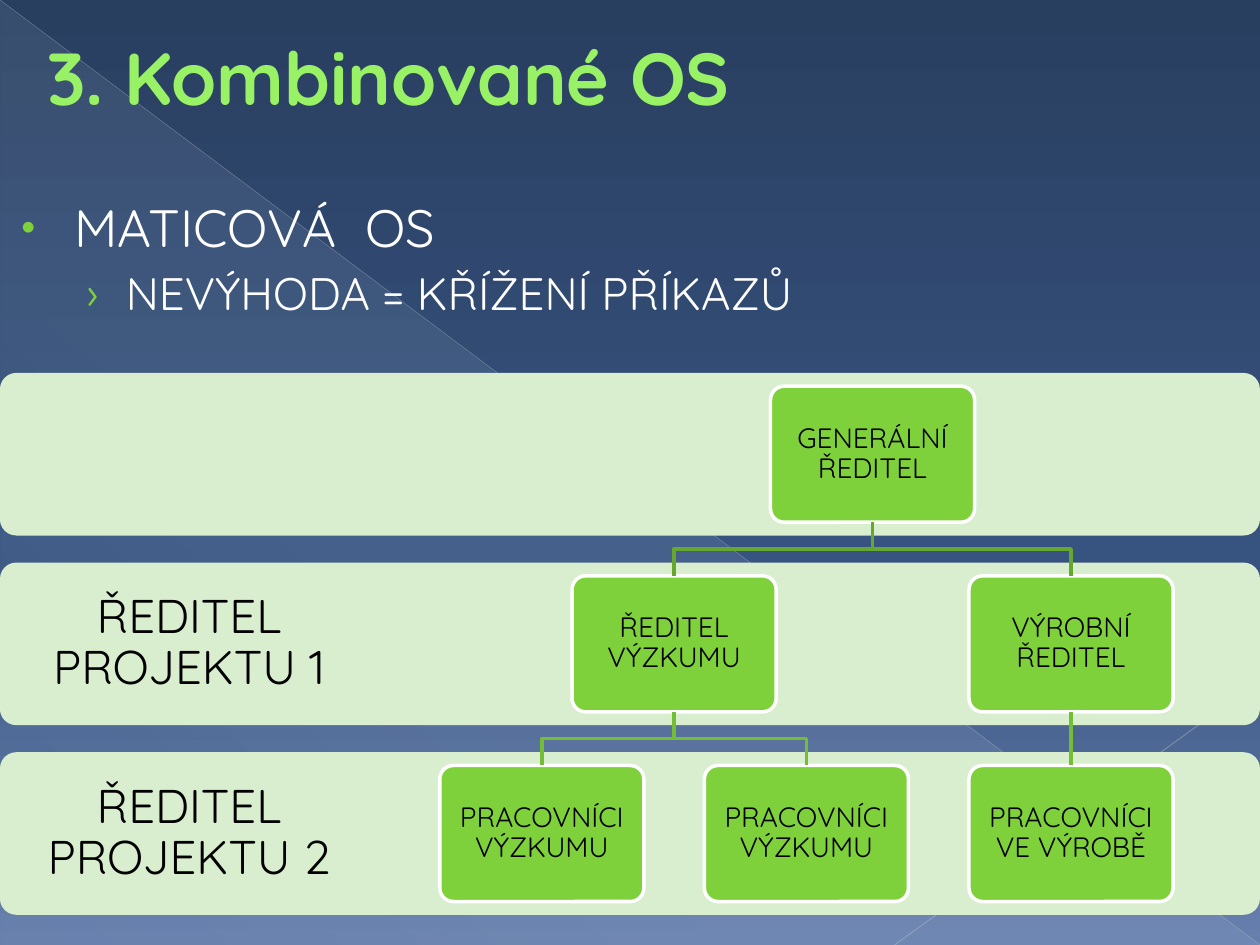
from lxml.etree import SubElement as Sub
from pptx import Presentation
from pptx.dml.color import RGBColor as Rgb
from pptx.enum.shapes import MSO_CONNECTOR as Link, MSO_SHAPE as Form
from pptx.enum.text import MSO_ANCHOR as Anchor, PP_ALIGN as Align
from pptx.oxml.ns import qn
from pptx.util import Inches as In, Pt

THEME = {
    "font": "Quicksand",
    "title": "99F166", "edge": "589129", "text": "FFFFFF", "ink": "000000",
    "lane": "D8EECE", "box": "7FD13B", "rim": "FFFFFF",
    "links": ["66A72F", "73BE36"],
    "sky": [(0, "293F60", 100), (60, "375380", 100), (100, "667FAC", 100)],
    "haze": [(0, "D6ECFF", 10), (70, "D6ECFF", 8), (100, "D6ECFF", 1)],
    "big": 42, "main": 30, "sub": 26, "label": 27, "small": 16,
}


def blend(props, stops, angle):
    """Swap the solid fill in props for a linear gradient of (place, colour, alpha)."""
    old = props.find(qn("a:solidFill"))
    grad = old.makeelement(qn("a:gradFill"), {"rotWithShape": "1"})
    props.replace(old, grad)
    row = Sub(grad, qn("a:gsLst"))
    for place, color, alpha in stops:
        stop = Sub(row, qn("a:gs"), pos=str(place * 1000))
        tint = Sub(stop, qn("a:srgbClr"), val=color)
        Sub(tint, qn("a:alpha"), val=str(alpha * 1000))
    Sub(grad, qn("a:lin"), ang=str(angle * 60000), scaled="0")


def write(para, text, size, color):
    run = para.add_run()
    run.text = text
    run.font.name = THEME["font"]
    run.font.size = Pt(THEME[size])
    run.font.color.rgb = Rgb.from_string(THEME[color])
    return run


deck = Presentation()
deck.slide_width, deck.slide_height = W, H = In(10), In(7.5)
slide = deck.slides.add_slide(deck.slide_layouts[6])
shapes = slide.shapes

# Backdrop
slide.background.fill.solid()
blend(slide.element.find(".//" + qn("p:bgPr")), THEME["sky"], 90)
haze = shapes.add_shape(Form.RIGHT_TRIANGLE, 0, 0, W, H)
haze.shadow.inherit = False
haze.line.fill.background()
haze.fill.solid()
blend(haze.element.spPr, THEME["haze"], 133)

rays = [
    (0, 0, W, H, "B7BCC5", 0.39, 35),
    (W, int(H * 0.72), int(W * 0.71), H, "BFC3CB", 0.47, 45),
]
for x1, y1, x2, y2, color, width, alpha in rays:
    ray = shapes.add_connector(Link.STRAIGHT, x1, y1, x2, y2)
    ray.line.color.rgb = Rgb.from_string(color)
    ray.line.width = Pt(width)
    tint = ray.element.spPr.find(".//" + qn("a:srgbClr"))
    Sub(tint, qn("a:alpha"), val=str(alpha * 1000))
    Sub(ray.element.spPr, qn("a:effectLst"))

# Bullets
body = shapes.add_textbox(0, In(1.5), In(9.25), In(1.3)).text_frame
body.word_wrap = True
points = [
    ("MATICOVÁ  OS", "main", 0.49, -0.42, 0, "•", 80),
    ("NEVÝHODA = KŘÍŽENÍ PŘÍKAZŮ", "sub", 0.9, -0.31, 4, "›", 95),
]
for i, (text, size, left, hang, gap, mark, scale) in enumerate(points):
    para = body.add_paragraph() if i else body.paragraphs[0]
    para.level = i
    para.space_before = Pt(gap)
    props = para._p.get_or_add_pPr()
    props.set("marL", str(In(left)))
    props.set("indent", str(In(hang)))
    Sub(Sub(props, qn("a:buClr")), qn("a:srgbClr"), val=THEME["box"])
    Sub(props, qn("a:buSzPct"), val=str(scale * 1000))
    Sub(props, qn("a:buFont"), typeface=THEME["font"])
    Sub(props, qn("a:buChar"), char=mark)
    write(para, text, size, "text")

# Grid of the chart
TOP, ROW, LANE = In(2.96), In(1.505), In(1.29)
LEFT, COL = In(3.49), In(2.1)
WIDE, TALL = In(1.62), In(1.08)
PAD = (LANE - TALL) // 2

# Lanes with their labels
for row, label in enumerate(["", "ŘEDITEL PROJEKTU 1", "ŘEDITEL PROJEKTU 2"]):
    y = TOP + row * ROW
    lane = shapes.add_shape(Form.ROUNDED_RECTANGLE, 0, y, W, LANE)
    lane.adjustments[0] = 0.1
    lane.shadow.inherit = False
    lane.fill.solid()
    lane.fill.fore_color.rgb = Rgb.from_string(THEME["lane"])
    lane.line.fill.background()
    if label:
        frame = shapes.add_textbox(0, y, int(W * 0.3), LANE).text_frame
        frame.word_wrap = True
        frame.vertical_anchor = Anchor.MIDDLE
        frame.margin_left = frame.margin_right = In(0.21)
        frame.margin_top = frame.margin_bottom = In(0.21)
        para = frame.paragraphs[0]
        para.alignment = Align.CENTER
        para.line_spacing = 0.9
        write(para, label, "label", "ink")

# Boxes: text, column, row, index of the parent
tree = [
    ("GENERÁLNÍ ŘEDITEL", 1.25, 0, None),
    ("ŘEDITEL VÝZKUMU", 0.5, 1, 0),
    ("VÝROBNÍ ŘEDITEL", 2, 1, 0),
    ("PRACOVNÍCI VÝZKUMU", 0, 2, 1),
    ("PRACOVNÍCI VÝZKUMU", 1, 2, 1),
    ("PRACOVNÍCI VE VÝROBĚ", 2, 2, 2),
]
boxes = []
for text, col, row, _ in tree:
    box = shapes.add_shape(Form.ROUNDED_RECTANGLE, int(LEFT + col * COL),
                           TOP + PAD + row * ROW, WIDE, TALL)
    box.adjustments[0] = 0.1
    box.shadow.inherit = False
    box.fill.solid()
    box.fill.fore_color.rgb = Rgb.from_string(THEME["box"])
    box.line.color.rgb = Rgb.from_string(THEME["rim"])
    box.line.width = Pt(2)
    frame = box.text_frame
    frame.word_wrap = True
    frame.vertical_anchor = Anchor.MIDDLE
    frame.margin_left = frame.margin_right = In(0.07)
    frame.margin_top = frame.margin_bottom = In(0.07)
    para = frame.paragraphs[0]
    para.alignment = Align.CENTER
    para.line_spacing = 0.9
    write(para, text, "small", "ink")
    boxes.append(box)

# Links from each parent down to its child
for box, (_, _, row, up) in zip(boxes, tree):
    if up is None:
        continue
    head = boxes[up]
    x1, y1 = head.left + WIDE // 2, head.top + TALL
    x2, y2 = box.left + WIDE // 2, box.top
    if x1 == x2:
        link = shapes.add_connector(Link.STRAIGHT, x1, y1, x2, y2)
        link.begin_connect(head, 2)
        link.end_connect(box, 0)
        Sub(link.element.spPr, qn("a:effectLst"))
    else:
        mid = (y1 + y2) // 2
        pen = shapes.build_freeform(x1, y1)
        pen.add_line_segments([(x1, mid), (x2, mid), (x2, y2)], close=False)
        link = pen.convert_to_shape()
        link.fill.background()
        link.shadow.inherit = False
    link.line.color.rgb = Rgb.from_string(THEME["links"][row - 1])
    link.line.width = Pt(2)

# Title
frame = shapes.add_textbox(In(0.28), In(0.13), In(9), In(0.95)).text_frame
frame.word_wrap = True
frame.vertical_anchor = Anchor.MIDDLE
run = write(frame.paragraphs[0], "3. Kombinované OS", "big", "title")
run.font.bold = True
props = run.font._element
edge = props.makeelement(qn("a:ln"), {"w": str(Pt(0.5))})
Sub(Sub(edge, qn("a:solidFill")), qn("a:srgbClr"), val=THEME["edge"])
props.insert(0, edge)

deck.save("out.pptx")
